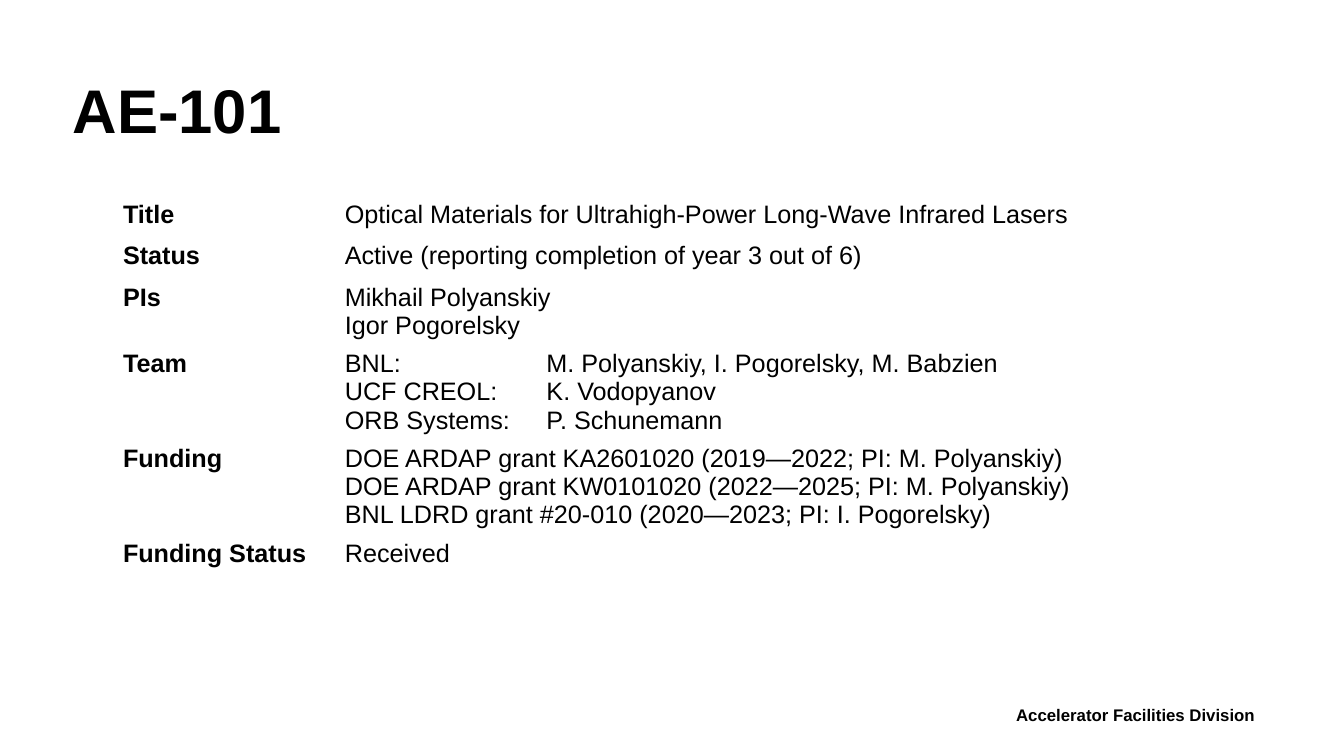
"""Build the AE-101 experiment summary slide."""
from dataclasses import dataclass

from lxml import etree
from pptx import Presentation
from pptx.dml.color import RGBColor
from pptx.enum.text import MSO_ANCHOR, PP_ALIGN
from pptx.oxml.ns import qn
from pptx.util import Inches, Pt

LEFT = PP_ALIGN.LEFT
MIDDLE = MSO_ANCHOR.MIDDLE
TITLE_ONLY = 5


@dataclass(frozen=True)
class Theme:
    font: str = "Arial"
    ink: RGBColor = RGBColor(0, 0, 0)
    paper: RGBColor = RGBColor(255, 255, 255)
    title: int = 44
    body: int = 18
    footer: int = 12


class Deck:
    def __init__(self, prs, theme):
        self.theme = theme
        self.s = prs.slides.add_slide(prs.slide_layouts[TITLE_ONLY])

    def set_text(self, tf, text, size, bold=False):
        tf.text = text
        for p in tf.paragraphs:
            p.alignment = LEFT
            for r in p.runs:
                r.font.name = self.theme.font
                r.font.size = Pt(size)
                r.font.bold = bold
                r.font.color.rgb = self.theme.ink

    def title(self, text, x, y, w, h):
        sp = self.s.shapes.title
        sp.left, sp.top, sp.width, sp.height = map(Inches, (x, y, w, h))
        self.set_text(sp.text_frame, text, self.theme.title, bold=True)
        sp.text_frame.vertical_anchor = MIDDLE
        sp.text_frame.paragraphs[0].line_spacing = 0.9

    def label(self, text, x, y, w, h):
        sp = self.s.shapes.add_textbox(*map(Inches, (x, y, w, h)))
        sp.text_frame.word_wrap = True
        self.set_text(sp.text_frame, text, self.theme.footer, bold=True)

    def tab_stop(self, p, position):
        tabs = etree.SubElement(p._p.get_or_add_pPr(), qn("a:tabLst"))
        etree.SubElement(tabs, qn("a:tab"), pos=str(Inches(position)), algn="l")

    def table(self, rows, x, y, widths, line=0.28, padding=0.1, min_height=0.41, tab=2):
        heights = [max(min_height, padding + line * len(lines)) for _, lines in rows]
        table = self.s.shapes.add_table(
            len(rows), len(widths), Inches(x), Inches(y),
            Inches(sum(widths)), Inches(sum(heights))).table
        table.first_row = table.horz_banding = False
        for column, width in zip(table.columns, widths):
            column.width = Inches(width)
        for i, (name, lines) in enumerate(rows):
            table.rows[i].height = Inches(heights[i])
            for j, text in enumerate((name, "\n".join(lines))):
                cell = table.cell(i, j)
                cell.fill.solid()
                cell.fill.fore_color.rgb = self.theme.paper
                self.set_text(cell.text_frame, text, self.theme.body, bold=j == 0)
                for p in cell.text_frame.paragraphs:
                    if "\t" in p.text:
                        self.tab_stop(p, tab)


SUMMARY = [
    ("Title", ["Optical Materials for Ultrahigh-Power Long-Wave Infrared Lasers"]),
    ("Status", ["Active (reporting completion of year 3 out of 6)"]),
    ("PIs", ["Mikhail Polyanskiy", "Igor Pogorelsky"]),
    ("Team", [
        "BNL:\tM. Polyanskiy, I. Pogorelsky, M. Babzien",
        "UCF CREOL:\tK. Vodopyanov",
        "ORB Systems:\tP. Schunemann",
    ]),
    ("Funding", [
        "DOE ARDAP grant KA2601020 (2019—2022; PI: M. Polyanskiy)",
        "DOE ARDAP grant KW0101020 (2022—2025; PI: M. Polyanskiy)",
        "BNL LDRD grant #20-010 (2020—2023; PI: I. Pogorelsky)",
    ]),
    ("Funding Status", ["Received"]),
]


def main():
    prs = Presentation()
    prs.slide_width, prs.slide_height = Inches(13.33), Inches(7.5)
    deck = Deck(prs, Theme())
    deck.title("AE-101", 0.62, 0.4, 12.08, 1.45)
    deck.table(SUMMARY, 1.12, 1.94, (2.2, 9.64))
    deck.label("Accelerator Facilities Division", 9.98, 6.94, 2.92, 0.3)
    prs.save("out.pptx")


if __name__ == "__main__":
    main()
